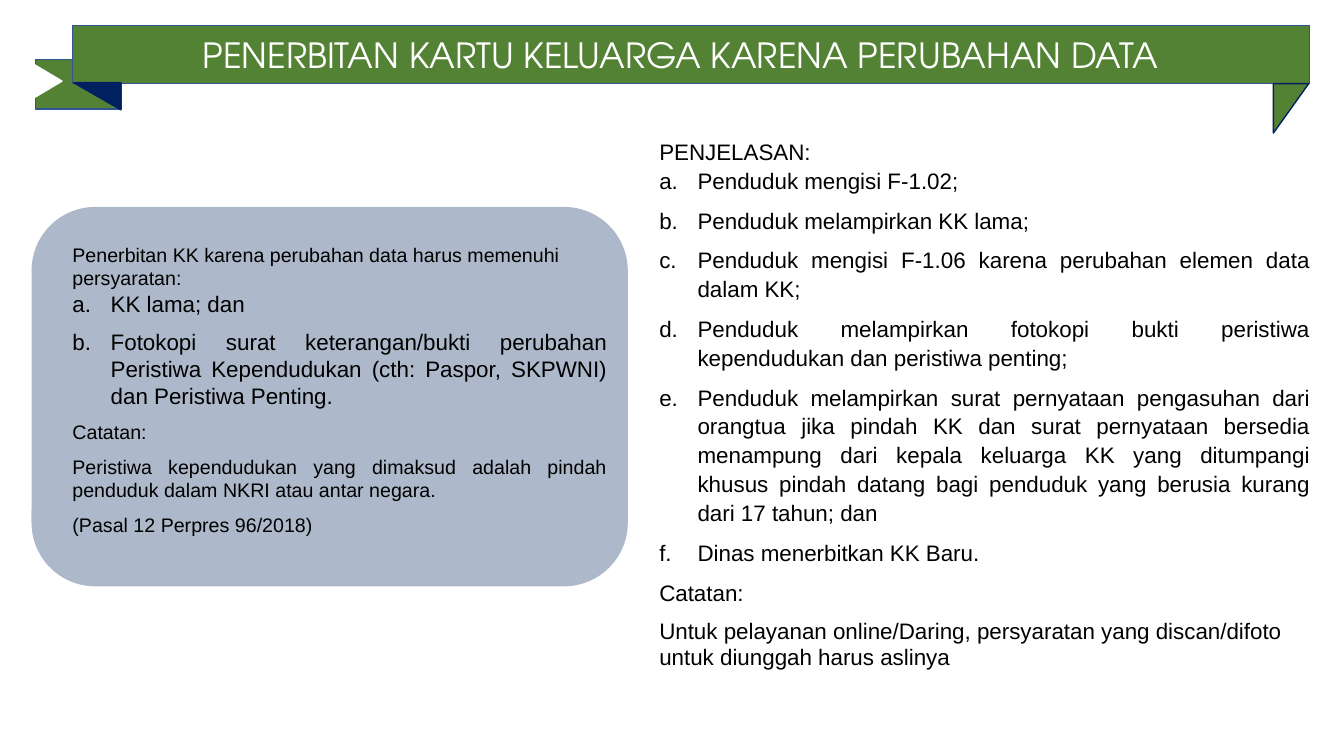
from dataclasses import dataclass

from lxml import etree
from pptx import Presentation
from pptx.dml.color import RGBColor
from pptx.enum.shapes import MSO_SHAPE
from pptx.enum.text import MSO_ANCHOR, PP_ALIGN
from pptx.oxml.ns import qn
from pptx.util import Pt

RECTANGLE = MSO_SHAPE.RECTANGLE
ROUNDED = MSO_SHAPE.ROUNDED_RECTANGLE
TRIANGLE = MSO_SHAPE.ISOSCELES_TRIANGLE
RIGHT_TRIANGLE = MSO_SHAPE.RIGHT_TRIANGLE
CENTER, JUSTIFY = PP_ALIGN.CENTER, PP_ALIGN.JUSTIFY
MIDDLE, TOP = MSO_ANCHOR.MIDDLE, MSO_ANCHOR.TOP

EMU_PER_PX = 9144
LIST_INDENT = 38


@dataclass(frozen=True)
class Theme:
    green: str = "548235"
    navy: str = "002060"
    tail_line: str = "2F5597"
    banner_line: str = "325491"
    panel: str = "ADB9CA"
    white: str = "FFFFFF"
    black: str = "000000"
    title_font: str = "TeX Gyre Adventor"
    body_font: str = "Arial"
    title_size: float = 24.8
    body_size: int = 16
    small_size: int = 14


THEME = Theme()
SPACED = {"alignment": JUSTIFY, "space_after": Pt(8)}
LOOSE = {**SPACED, "line_spacing": 1.07}
TITLE = {"alignment": CENTER, "line_spacing": 0.7}

REQUIREMENTS = [
    "KK lama; dan",
    "Fotokopi surat keterangan/bukti perubahan Peristiwa Kependudukan "
    "(cth: Paspor, SKPWNI) dan Peristiwa Penting.",
]
REQUIREMENT_NOTES = [
    "Catatan:",
    "Peristiwa kependudukan yang dimaksud adalah pindah penduduk dalam NKRI atau antar negara.",
    "(Pasal 12 Perpres 96/2018)",
]
STEPS = [
    "Penduduk mengisi F-1.02;",
    "Penduduk melampirkan KK lama;",
    "Penduduk mengisi F-1.06 karena perubahan elemen data dalam KK;",
    "Penduduk melampirkan fotokopi bukti peristiwa kependudukan dan peristiwa penting;",
    "Penduduk melampirkan surat pernyataan pengasuhan dari orangtua jika pindah KK dan "
    "surat pernyataan bersedia menampung dari kepala keluarga KK yang ditumpangi khusus "
    "pindah datang bagi penduduk yang berusia kurang dari 17 tahun; dan",
    "Dinas menerbitkan KK Baru.",
]


def px(*lengths):
    return [length * EMU_PER_PX for length in lengths]


def set_attributes(target, values):
    for name, value in values.items():
        setattr(target, name, value)


def add_block(slide, kind, box, fill, line, rotation=0):
    shape = slide.shapes.add_shape(kind, *px(*box))
    shape.rotation = rotation
    shape.shadow.inherit = False
    shape.fill.solid()
    shape.fill.fore_color.rgb = RGBColor.from_string(fill)
    shape.line.color.rgb = RGBColor.from_string(line)
    shape.line.width = Pt(1)


def add_text_box(slide, box, anchor=TOP):
    frame = slide.shapes.add_textbox(*px(*box)).text_frame
    set_attributes(frame, {"word_wrap": True, "vertical_anchor": anchor})
    return frame


def add_paragraph(frame, text, size, layout=None, font=THEME.body_font, color=THEME.black):
    first = frame.paragraphs[0]
    paragraph = frame.add_paragraph() if first.runs else first
    set_attributes(paragraph, layout or {})
    run = paragraph.add_run()
    run.text = text
    set_attributes(run.font, {"size": Pt(size), "name": font})
    run.font.color.rgb = RGBColor.from_string(color)
    return paragraph


def add_lettered_list(frame, items, layout):
    indent, = px(LIST_INDENT)
    for item in items:
        paragraph = add_paragraph(frame, item, THEME.body_size, layout)
        properties = paragraph._p.get_or_add_pPr()
        properties.set("marL", str(indent))
        properties.set("indent", str(-indent))
        etree.SubElement(properties, qn("a:buFont"), typeface="+mj-lt")
        etree.SubElement(properties, qn("a:buAutoNum"), type="alphaLcPeriod")


def add_banner(slide):
    add_block(slide, RECTANGLE, (35, 59, 85, 49), THEME.green, THEME.tail_line)
    add_block(slide, RECTANGLE, (72, 25, 1227, 58), THEME.green, THEME.banner_line)
    add_block(slide, RIGHT_TRIANGLE, (1256, 90, 49, 35), THEME.green, THEME.navy, 90)
    add_block(slide, RIGHT_TRIANGLE, (73, 82, 47, 27), THEME.navy, THEME.navy, 180)
    title = add_text_box(slide, (114, 26, 1123, 66), MIDDLE)
    add_paragraph(title, "PENERBITAN KARTU KELUARGA KARENA PERUBAHAN DATA",
                  THEME.title_size, TITLE, THEME.title_font, THEME.white)
    add_block(slide, TRIANGLE, (10, 57, 56, 47), THEME.white, THEME.white, 90)


def add_explanation(slide):
    frame = add_text_box(slide, (644, 132, 665, 544))
    add_paragraph(frame, "PENJELASAN:", THEME.body_size)
    add_lettered_list(frame, STEPS, LOOSE)
    add_paragraph(frame, "Catatan:", THEME.body_size, LOOSE)
    add_paragraph(frame, "Untuk pelayanan online/Daring, persyaratan yang discan/difoto "
                  "untuk diunggah harus aslinya", THEME.body_size)


def add_requirements(slide):
    add_block(slide, ROUNDED, (32, 206, 590, 375), THEME.panel, THEME.panel)
    frame = add_text_box(slide, (62, 236, 550, 408))
    add_paragraph(frame, "Penerbitan KK karena perubahan data harus memenuhi persyaratan:",
                  THEME.small_size)
    add_lettered_list(frame, REQUIREMENTS, SPACED)
    for note in REQUIREMENT_NOTES:
        add_paragraph(frame, note, THEME.small_size, SPACED)


def main():
    presentation = Presentation()
    width, height = px(1333, 750)
    set_attributes(presentation, {"slide_width": width, "slide_height": height})
    slide = presentation.slides.add_slide(presentation.slide_layouts[6])
    add_banner(slide)
    add_explanation(slide)
    add_requirements(slide)
    presentation.save("out.pptx")


if __name__ == "__main__":
    main()
